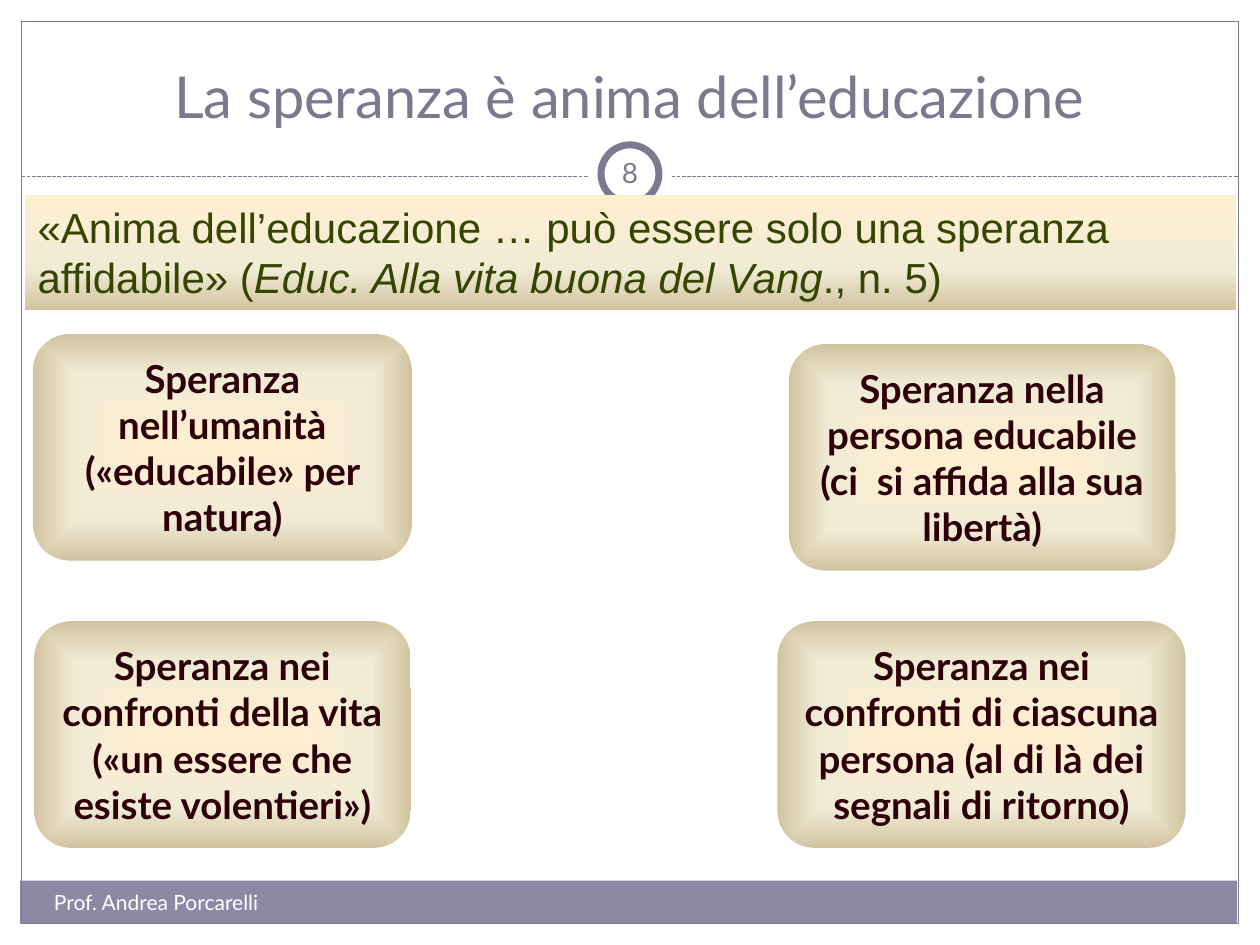
from lxml import etree
from pptx import Presentation
from pptx.dml.color import RGBColor
from pptx.enum.dml import MSO_LINE
from pptx.enum.shapes import MSO_CONNECTOR, MSO_SHAPE
from pptx.enum.text import MSO_ANCHOR, PP_ALIGN
from pptx.oxml import parse_xml
from pptx.oxml.ns import nsdecls, qn
from pptx.util import Inches, Pt

RECT, ROUNDED, OVAL = MSO_SHAPE.RECTANGLE, MSO_SHAPE.ROUNDED_RECTANGLE, MSO_SHAPE.OVAL
LEFT, CENTER = PP_ALIGN.LEFT, PP_ALIGN.CENTER
TOP, MIDDLE, BOTTOM = MSO_ANCHOR.TOP, MSO_ANCHOR.MIDDLE, MSO_ANCHOR.BOTTOM

TITLE = "La speranza è anima dell’educazione"
AUTHOR = "Prof. Andrea Porcarelli"
PAGE = "8"
QUOTE = [
    ("«Anima dell’educazione … può essere solo una speranza affidabile» (", False),
    ("Educ. Alla vita buona del Vang", True),
    ("., n. 5)", False),
]
HOPES = [
    ("Speranza nell’umanità («educabile» per natura)", 0.26, 2.65, 3.01),
    ("Speranza nella persona educabile (ci  si affida alla sua libertà)", 6.26, 2.73, 3.07),
    ("Speranza nei confronti della vita («un essere che esiste volentieri»)", 0.27, 4.93, 2.99),
    ("Speranza nei confronti di ciascuna persona (al di là dei segnali di ritorno)", 6.17, 4.93, 3.24),
]
HOPE_HEIGHT = 1.8

THEME = {
    "font": "Lato", "quote_font": "Arial",
    "white": "FFFFFF", "band": "8D89A4", "rule": "7C7991", "title": "7B7890",
    "quote": "344600", "hope": "2E0009",
    "parchment": [(0, "FFEFD1"), (65, "F0EBD5"), (100, "D1C39F")],
    "title_size": 33, "quote_size": 24, "hope_size": 22, "page_size": 16, "author_size": 12,
}
LINEAR = '<a:lin ang="5400000" scaled="0"/>'
FROM_CENTRE = ('<a:path path="rect"><a:fillToRect l="50000" t="50000" '
               'r="50000" b="50000"/></a:path>')
WIDTH, HEIGHT, MARGIN = 10, 7.5, 0.17
RULE_Y = 1.4


def color(name):
    return RGBColor.from_string(THEME[name])


def write(holder, text, ink, size, font="font", align=LEFT, anchor=TOP, bold=False, inset=None):
    frame = holder.text_frame
    frame.word_wrap = True
    frame.vertical_anchor = anchor
    if inset is not None:
        frame.margin_left = frame.margin_right = Inches(inset)
    paragraph = frame.paragraphs[0]
    paragraph.alignment = align
    for words, italic in [(text, False)] if isinstance(text, str) else text:
        run = paragraph.add_run()
        run.text = words
        run.font.name = THEME[font]
        run.font.size = Pt(THEME[size])
        run.font.bold = bold
        run.font.italic = italic
        run.font.color.rgb = color(ink)


def add_panel(slide, kind, box, fill=None, line=None, weight=0.75):
    panel = slide.shapes.add_shape(kind, *map(Inches, box))
    panel.shadow.inherit = False
    if fill:
        panel.fill.solid()
        panel.fill.fore_color.rgb = color(fill)
    else:
        panel.fill.background()
    if line:
        panel.line.color.rgb = color(line)
        panel.line.width = Pt(weight)
    else:
        panel.line.fill.background()
    return panel


def add_parchment(slide, kind, box, direction):
    panel = add_panel(slide, kind, box)
    stops = "".join(f'<a:gs pos="{place * 1000}"><a:srgbClr val="{tint}"/></a:gs>'
                    for place, tint in THEME["parchment"])
    gradient = parse_xml(f'<a:gradFill {nsdecls("a")} rotWithShape="1">'
                         f'<a:gsLst>{stops}</a:gsLst>{direction}</a:gradFill>')
    properties = panel._element.spPr
    properties.replace(properties.find(qn("a:noFill")), gradient)
    return panel


def add_frame(slide):
    inner = WIDTH - 2 * MARGIN
    for box in [(0, 0, WIDTH, 1.52), (0, 0, MARGIN, HEIGHT),
                (WIDTH - MARGIN, 0, MARGIN, HEIGHT)]:
        add_panel(slide, RECT, box, "white")
    add_panel(slide, RECT, (0.16, 6.99, 9.66, 0.34), "band")
    add_panel(slide, RECT, (MARGIN, MARGIN, inner, HEIGHT - 2 * MARGIN), line="rule")
    divider = slide.shapes.add_connector(
        MSO_CONNECTOR.STRAIGHT, Inches(MARGIN), Inches(RULE_Y),
        Inches(WIDTH - MARGIN), Inches(RULE_Y))
    divider.line.color.rgb = color("rule")
    divider.line.width = Pt(0.75)
    divider.line.dash_style = MSO_LINE.SQUARE_DOT
    etree.SubElement(divider._element.spPr, qn("a:effectLst"))
    for size, line in [(0.67, None), (0.46, "rule")]:
        box = ((WIDTH - size) / 2, 1.38 - size / 2, size, size)
        add_panel(slide, OVAL, box, "white", line, 4)


def add_label(slide, box, text, **style):
    write(slide.shapes.add_textbox(*map(Inches, box)), text, **style)


def main():
    deck = Presentation()
    deck.slide_width, deck.slide_height = Inches(WIDTH), Inches(HEIGHT)
    slide = deck.slides.add_slide(deck.slide_layouts[5])
    add_frame(slide)

    title = slide.shapes.title
    slide.shapes._spTree.append(title._element)
    title.left, title.top, title.width, title.height = map(Inches, (0.33, 0.25, 9.33, 0.83))
    write(title, TITLE, "title", "title_size", align=CENTER, anchor=BOTTOM)

    add_label(slide, (0.33, 7.01, 3.92, 0.4), AUTHOR, ink="white", size="author_size")
    add_label(slide, (4.75, 1.13, 0.5, 0.48), PAGE, ink="rule", size="page_size",
              align=CENTER, anchor=MIDDLE, inset=0.05)

    quote = add_parchment(slide, RECT, (0.2, 1.55, 9.61, 0.91), LINEAR)
    write(quote, QUOTE, "quote", "quote_size", font="quote_font")

    for text, left, top, width in HOPES:
        hope = add_parchment(slide, ROUNDED, (left, top, width, HOPE_HEIGHT), FROM_CENTRE)
        write(hope, text, "hope", "hope_size", align=CENTER, anchor=MIDDLE, bold=True)

    deck.save("out.pptx")


if __name__ == "__main__":
    main()
